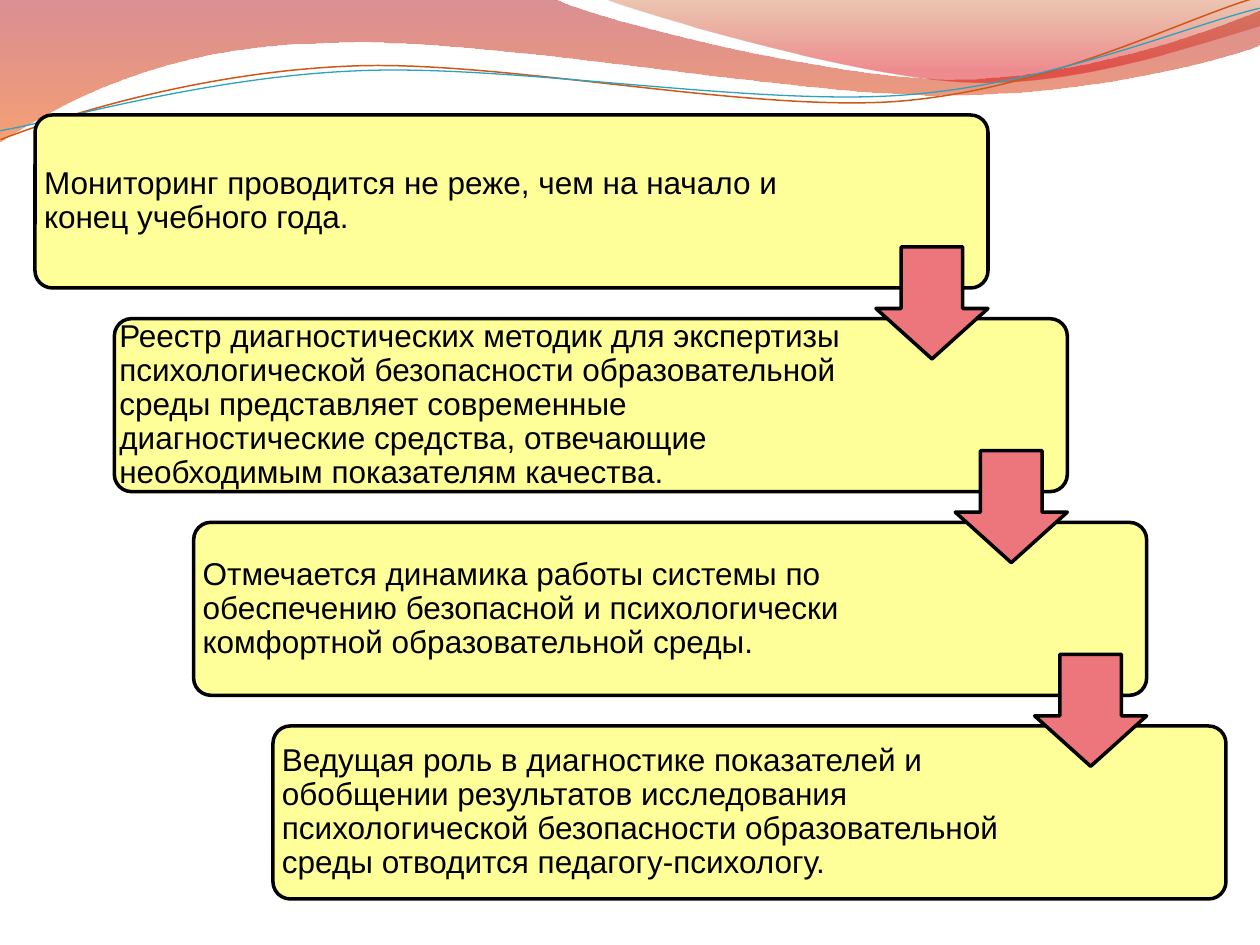
from lxml.etree import SubElement
from pptx import Presentation
from pptx.dml.color import RGBColor
from pptx.enum.shapes import MSO_SHAPE as Shape
from pptx.enum.text import MSO_ANCHOR as Anchor
from pptx.oxml.ns import qn
from pptx.util import Emu, Pt

PX = 914400 / 126  # EMU in one px

BLACK = RGBColor(0x00, 0x00, 0x00)
YELLOW = RGBColor(0xFF, 0xFF, 0x99)
PINK = RGBColor(0xEC, 0x76, 0x7C)
CRIMSON = RGBColor(0xAF, 0x09, 0x11)
ORANGE = RGBColor(0xEE, 0x53, 0x00)
RUST = RGBColor(0xC2, 0x44, 0x00)
RED = RGBColor(0xDC, 0x00, 0x0B)
COPPER = RGBColor(0xCF, 0x58, 0x18)
TEAL = RGBColor(0x2D, 0xA2, 0xBF)

# Outlines: a pair is a corner, six numbers are a Bezier segment
WIDE_WAVE = [(0, 0), (554, -1), (600, 21, 837, 79, 955, 79),
             (1074, 79, 1207, 33, 1260, 11), (1261, 45),
             (1239, 55, 1096, 96, 940, 95), (784, 95, 481, 35, 324, 43),
             (163, 45, 58, 105, -1, 142)]
RIGHT_WAVE = [(604, -1), (641, 14, 859, 78, 969, 82),
              (1079, 87, 1211, 40, 1260, 26), (1260, 0)]
# The curves lie flat here and are tilted when drawn
TILT = -2.7
UPPER_CURVE = [(-2, 110), (58, 90, 199, 52, 350, 53),
               (499, 53, 745, 118, 896, 114), (1049, 109, 1184, 45, 1260, 27)]
LOWER_CURVE = [(-2, 101), (57, 94, 207, 57, 357, 58),
               (509, 58, 750, 112, 902, 108), (1052, 104, 1188, 52, 1262, 38)]

# Text and its inset
STEPS = [
    ("Мониторинг проводится не реже, чем на начало и конец учебного года.", 9),
    ("Реестр диагностических методик для экспертизы\v"
     "психологической безопасности образовательной среды представляет "
     "современные диагностические средства, отвечающие необходимым "
     "показателям качества.", 5),
    ("Отмечается динамика работы системы по обеспечению безопасной и "
     "психологически комфортной образовательной среды.", 9),
    ("Ведущая роль в диагностике показателей и обобщении результатов "
     "исследования психологической безопасности образовательной среды "
     "отводится педагогу-психологу.", 9),
]


def px(*values):
    return [Emu(round(v * PX)) for v in values]


def add_outline(s, left, top, outline, close):
    points = [px(left + part[i], top + part[i + 1])
              for part in outline for i in range(0, len(part), 2)]
    builder = s.shapes.build_freeform(*points[0], scale=1.0)
    builder.add_line_segments(points[1:], close=close)
    sp = builder.convert_to_shape()
    sp.shadow.inherit = False
    # Join each three points of a Bezier segment into one curve
    route = next(sp.element.spPr.iter(qn("a:path")))
    corners = iter(list(route)[1:])
    for part in outline[1:]:
        first = next(corners)
        if len(part) == 6:
            curve = SubElement(route, qn("a:cubicBezTo"))
            route.replace(first, curve)
            curve.append(first[0])
            for _ in range(2):
                corner = next(corners)
                curve.append(corner[0])
                route.remove(corner)
    return sp


def add_wave(s, left, top, outline, stops):
    sp = add_outline(s, left, top, outline, True)
    sp.line.fill.background()
    sp.fill.gradient()
    sp.fill.gradient_angle = 270
    for stop, (position, color, _) in zip(sp.fill.gradient_stops, stops):
        stop.position = position
        stop.color.rgb = color
    for clr, (_, _, alpha) in zip(sp.element.spPr.iter(qn("a:srgbClr")), stops):
        SubElement(clr, qn("a:alpha"), val=str(alpha * 1000))


def add_curve(s, left, top, outline, color, width):
    sp = add_outline(s, left, top, outline, False)
    sp.rotation = TILT
    sp.fill.background()
    sp.line.color.rgb = color
    sp.line.width = Pt(width)


def add_header(s, left, top):
    add_wave(s, left, top, WIDE_WAVE, [(0, CRIMSON, 45), (1, ORANGE, 55)])
    add_wave(s, left, top, RIGHT_WAVE, [(0, RUST, 30), (0.8, RED, 45)])
    add_curve(s, left, top, UPPER_CURVE, COPPER, 0.85)
    add_curve(s, left, top, LOWER_CURVE, TEAL, 0.75)


def add_block(s, kind, box, adjustments, color):
    sp = s.shapes.add_shape(kind, *px(*box))
    for i, value in enumerate(adjustments):
        sp.adjustments[i] = value
    sp.shadow.inherit = False
    sp.fill.solid()
    sp.fill.fore_color.rgb = color
    sp.line.color.rgb = BLACK
    sp.line.width = Pt(2)


def add_step(s, left, top, width, height, text, inset):
    add_block(s, Shape.ROUNDED_RECTANGLE, (left, top, width, height),
              [0.1], YELLOW)
    tf = s.shapes.add_textbox(*px(left, top, width * 4 // 5, height)).text_frame
    tf.word_wrap = True
    tf.vertical_anchor = Anchor.MIDDLE
    tf.margin_left, tf.margin_top, tf.margin_right, tf.margin_bottom = px(*[inset] * 4)
    p = tf.paragraphs[0]
    p.text = text
    p.line_spacing = 0.9
    p.font.name = "Arial"
    p.font.size = Pt(18)
    p.font.color.rgb = BLACK


def add_staircase(s, left, top, width, height):
    step_w, step_h, arrow = 953, 173, 112
    last = len(STEPS) - 1
    corners = [(left + (width - step_w) * i / last,
                top + (height - step_h) * i / last) for i in range(last + 1)]
    for (x, y), (text, inset) in zip(corners, STEPS):
        add_step(s, x, y, step_w, step_h, text, inset)
    # Arrows end flush with the right edge of the upper step
    for x, y in corners[:-1]:
        add_block(s, Shape.DOWN_ARROW,
                  (x + step_w - arrow, y + 132, arrow, arrow),
                  [0.55, 0.45], PINK)


def main():
    prs = Presentation()
    prs.slide_width, prs.slide_height = px(1260, 945)
    s = prs.slides.add_slide(prs.slide_layouts[6])
    add_header(s, 0, 0)
    add_staircase(s, 35, 115, 1191, 784)
    prs.save("out.pptx")


if __name__ == "__main__":
    main()
